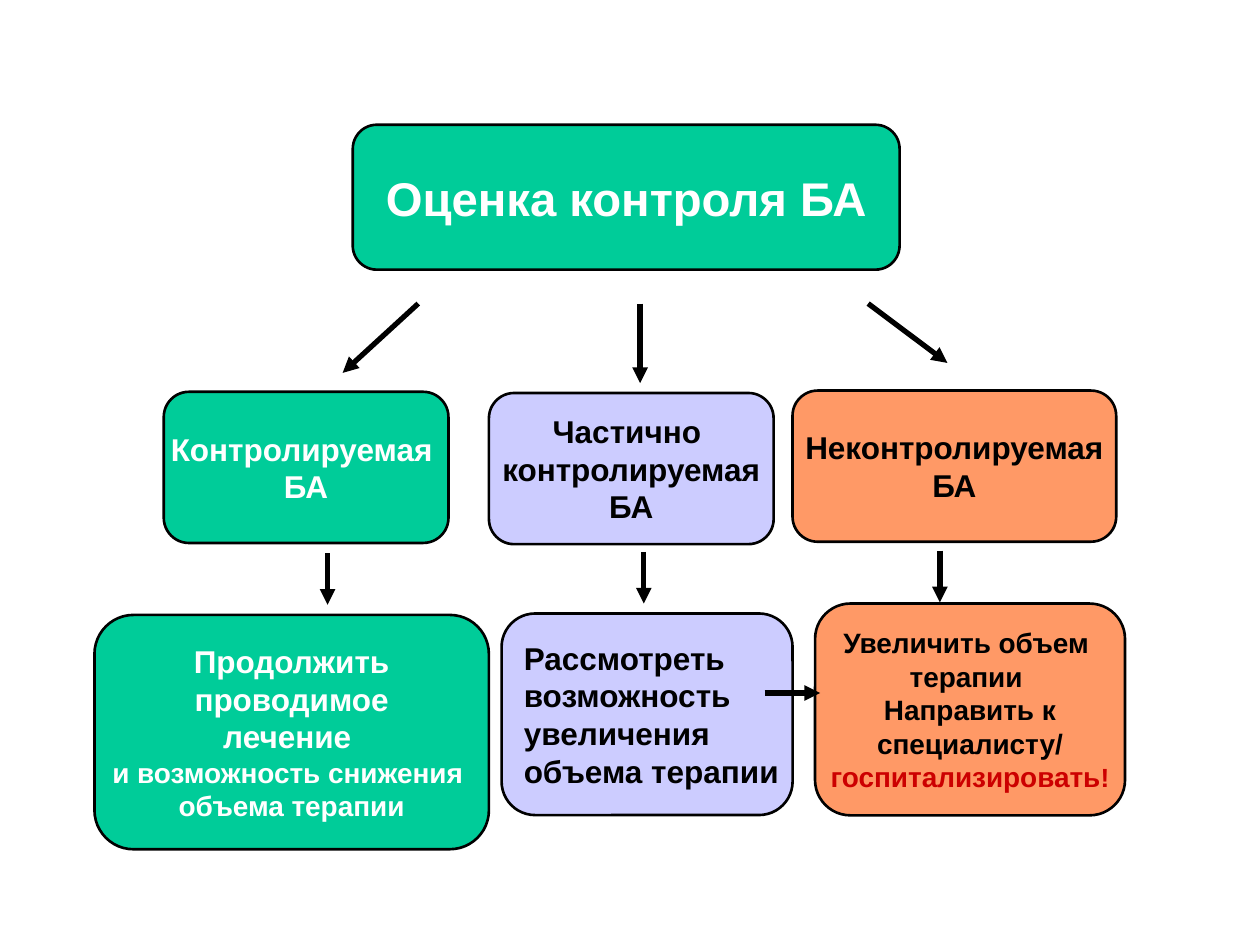
from lxml import etree
from pptx import Presentation
from pptx.dml.color import RGBColor
from pptx.enum import shapes, text
from pptx.oxml.ns import qn
from pptx.util import Pt

COLORS = {
    "green": "00CC99",
    "lilac": "CCCCFF",
    "orange": "FF9966",
    "white": "FFFFFF",
    "black": "000000",
    "red": "CC0000",
}
CENTER, LEFT = text.PP_ALIGN.CENTER, text.PP_ALIGN.LEFT

# Position, fill, alignment, then runs of (wording, size, colour)
BOXES = [
    ((201.6, 71.3, 312.5, 82.8), "green", CENTER,
     [("Оценка контроля БА", 27, "white")]),
    ((93.6, 223.9, 162.7, 86.4), "green", CENTER,
     [("Контролируемая \nБА", 18, "white")]),
    ((279.4, 224.6, 162.7, 86.4), "lilac", CENTER,
     [("Частично \nконтролируемая\nБА", 18, "black")]),
    ((452.9, 223.2, 185, 86.4), "orange", CENTER,
     [("Неконтролируемая\nБА", 18, "black")]),
    ((54, 351.4, 225.4, 133.9), "green", CENTER,
     [("Продолжить\nпроводимое\nлечение \n", 18, "white"),
      ("и возможность снижения \nобъема терапии", 16, "white")]),
    ((286.6, 350.6, 166.3, 115.2), "lilac", LEFT,
     [("Рассмотреть \nвозможность \nувеличения \nобъема терапии", 18, "black")]),
    ((465.8, 344.9, 177.1, 121), "orange", CENTER,
     [("Увеличить объем \nтерапии \nНаправить к\nспециалисту/\n", 16, "black"),
      ("госпитализировать", 16, "red"),
      ("!", 15, "red")]),
]

# Start x, start y, end x, end y
ARROWS = [
    (239, 173.5, 195.8, 213.1),
    (496.1, 173.5, 541.4, 207.4),
    (365.8, 173.5, 365.8, 218.9),
    (187.2, 316.1, 187.2, 345.6),
    (367.9, 315.4, 367.9, 344.9),
    (537.1, 314.6, 537.1, 344.2),
    (437, 396, 468.7, 396),
]


def color(name):
    return RGBColor.from_string(COLORS[name])


def add_run(paragraph, wording, size, color_name):
    """Add the wording as bold runs, with a line break at each newline."""
    for number, line in enumerate(wording.split("\n")):
        if number:
            paragraph.add_line_break()
        if line:
            run = paragraph.add_run()
            run.text = line
            font_format = {"name": "Arial", "size": Pt(size), "bold": True}
            for attribute, value in font_format.items():
                setattr(run.font, attribute, value)
            run.font.color.rgb = color(color_name)


presentation = Presentation()
presentation.slide_width, presentation.slide_height = Pt(720), Pt(540)
slide = presentation.slides.add_slide(presentation.slide_layouts[6])

for position, fill, alignment, runs in BOXES:
    shape = slide.shapes.add_shape(
        shapes.MSO_SHAPE.ROUNDED_RECTANGLE, *(Pt(length) for length in position))
    shape.shadow.inherit = False
    shape.fill.solid()
    shape.fill.fore_color.rgb = color(fill)
    shape.line.color.rgb = color("black")
    shape.line.width = Pt(1.5)
    frame_format = {"word_wrap": False, "vertical_anchor": text.MSO_ANCHOR.MIDDLE}
    for attribute, value in frame_format.items():
        setattr(shape.text_frame, attribute, value)
    paragraph = shape.text_frame.paragraphs[0]
    paragraph.alignment = alignment
    for run_format in runs:
        add_run(paragraph, *run_format)

for ends in ARROWS:
    arrow = slide.shapes.add_connector(
        shapes.MSO_CONNECTOR.STRAIGHT, *(Pt(length) for length in ends))
    arrow.line.color.rgb = color("black")
    arrow.line.width = Pt(3)
    etree.SubElement(arrow.line._get_or_add_ln(), qn("a:tailEnd"), type="triangle")
    etree.SubElement(arrow._element.spPr, qn("a:effectLst"))

presentation.save("out.pptx")
